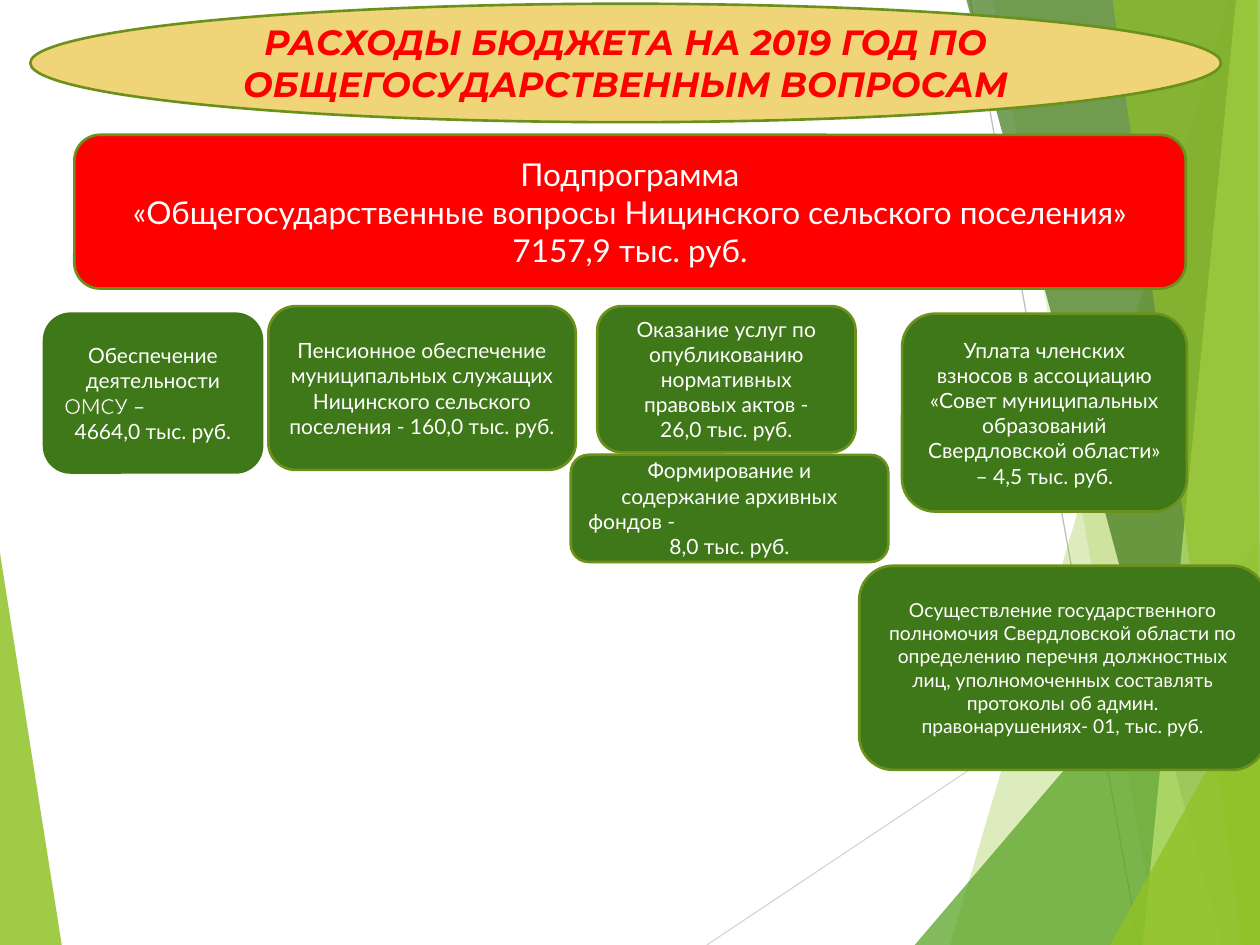
from dataclasses import dataclass

from lxml.etree import SubElement
from pptx import Presentation
from pptx.dml.color import RGBColor as Rgb
from pptx.enum.shapes import MSO_CONNECTOR as Link
from pptx.enum.shapes import MSO_SHAPE as Kind
from pptx.enum.text import MSO_ANCHOR as Anchor
from pptx.enum.text import PP_ALIGN as Align
from pptx.oxml import parse_xml
from pptx.oxml.ns import nsdecls, qn
from pptx.slide import Slide
from pptx.util import Inches, Pt


@dataclass(frozen=True)
class Theme:
    white: str = "FFFFFF"
    red: str = "FF0000"
    sand: str = "F0D578"
    dark: str = "3F7819"
    green: str = "54A021"
    lime: str = "90C226"
    pale: str = "C0E474"
    edge: str = "6B901C"
    body: str = "Lato"
    head: str = "Montserrat"
    title: int = 20
    large: int = 18
    text: int = 12
    small: int = 11
    border: float = 1.5
    thin: float = 0.75


THEME = Theme()


@dataclass(frozen=True)
class Wedge:
    points: tuple[tuple[float, float], ...]
    fill: str
    alpha: int


@dataclass(frozen=True)
class Ray:
    start: tuple[float, float]
    end: tuple[float, float]
    color: str


@dataclass(frozen=True)
class Para:
    text: str
    align: Align = Align.CENTER
    ring: str = ""


@dataclass(frozen=True)
class Box:
    place: tuple[float, float, float, float]
    paras: tuple[Para, ...]
    size: int = THEME.text
    fill: str = THEME.dark
    edge: str = THEME.edge
    kind: Kind = Kind.ROUNDED_RECTANGLE
    color: str = THEME.white
    font: str = THEME.body
    strong: bool = False


LEFT = Wedge(((0, 4.39), (0.49, 7.5), (0, 7.5)), THEME.lime, 85)
RAYS = (
    Ray((5.61, 7.5), (10, 4.57), "D9D9D9"),
    Ray((7.7, 0), (9.04, 7.5), "BFBFBF"),
)
WEDGES = (
    Wedge(((9.75, 0), (7.54, 7.5), (10, 7.5), (10, 0)), THEME.lime, 30),
    Wedge(((7.88, 0), (9.19, 7.5), (10, 7.5), (10, 0)), THEME.lime, 20),
    Wedge(((7.26, 7.5), (10, 4.29), (10, 7.5)), THEME.green, 72),
    Wedge(((7.67, 0), (9.7, 7.5), (10, 7.5), (10, 0)), THEME.dark, 70),
    Wedge(((9.81, 0), (9.07, 7.5), (10, 7.5), (10, 0)), THEME.pale, 70),
    Wedge(((8.83, 0), (9.86, 7.5), (10, 7.5), (9.98, 0)), THEME.lime, 65),
    Wedge(((8.81, 7.5), (10, 5.35), (10, 7.5)), THEME.lime, 80),
)
BOXES = (
    Box((0.24, 0.03, 9.45, 0.94),
        (Para("РАСХОДЫ БЮДЖЕТА НА 2019 ГОД ПО ОБЩЕГОСУДАРСТВЕННЫМ ВОПРОСАМ"),),
        size=THEME.title, fill=THEME.sand, kind=Kind.OVAL,
        color=THEME.red, font=THEME.head, strong=True),
    Box((0.59, 1.07, 8.82, 1.22),
        (Para("Подпрограмма"),
         Para("«Общегосударственные вопросы Ницинского сельского поселения»"),
         Para("7157,9 тыс. руб.")),
        size=THEME.large, fill=THEME.red),
    Box((0.35, 2.49, 1.73, 1.26),
        (Para("Обеспечение деятельности"),
         Para(" –", Align.LEFT, "ОМСУ"),
         Para("4664,0 тыс. руб.")),
        edge=THEME.dark),
    Box((2.13, 2.43, 2.44, 1.3),
        (Para("Пенсионное обеспечение муниципальных служащих Ницинского "
              "сельского поселения - 160,0 тыс. руб."),)),
    Box((4.74, 2.43, 2.05, 1.16),
        (Para("Оказание услуг по опубликованию нормативных правовых актов -"),
         Para("26,0 тыс. руб."))),
    Box((7.16, 2.49, 2.26, 1.57),
        (Para("Уплата членских взносов в ассоциацию «Совет муниципальных "
              "образований Свердловской области» – 4,5 тыс. руб."),)),
    Box((4.53, 3.61, 2.52, 0.85),
        (Para("Формирование и содержание архивных"),
         Para("фондов -", Align.LEFT),
         Para("8,0 тыс. руб."))),
    Box((6.82, 4.49, 3.23, 1.62),
        (Para("Осуществление государственного полномочия Свердловской области "
              "по определению перечня должностных лиц, уполномоченных составлять "
              "протоколы об админ. правонарушениях- 01, тыс. руб."),),
        size=THEME.small),
)


def paint(fill, color: str) -> None:
    """Give a fill one solid colour."""
    fill.solid()
    fill.fore_color.rgb = Rgb.from_string(color)


def draw_wedge(slide: Slide, wedge: Wedge) -> None:
    """Draw a see-through polygon."""
    spots = [(Inches(x), Inches(y)) for x, y in wedge.points]
    pen = slide.shapes.build_freeform(*spots[0])
    pen.add_line_segments(spots[1:], close=True)
    shape = pen.convert_to_shape()
    shape.shadow.inherit = False
    paint(shape.fill, wedge.fill)
    shape.line.fill.background()
    tone = shape.fill._xPr.find(qn("a:solidFill"))[0]
    SubElement(tone, qn("a:alpha"), val=str(wedge.alpha * 1000))


def draw_ray(slide: Slide, ray: Ray) -> None:
    """Draw a thin straight line."""
    ends = [Inches(n) for n in (*ray.start, *ray.end)]
    line = slide.shapes.add_connector(Link.STRAIGHT, *ends)
    line.line.width = Pt(THEME.thin)
    paint(line.line.fill, ray.color)
    SubElement(line._element.spPr, qn("a:effectLst"))


def add_run(para, text: str, box: Box):
    """Add a run of text in the style of its box."""
    run = para.add_run()
    run.text = text
    form = {"name": box.font, "size": Pt(box.size),
            "bold": box.strong, "italic": box.strong}
    for key, value in form.items():
        setattr(run.font, key, value)
    run.font.color.rgb = Rgb.from_string(box.color)
    return run


def add_ring(run) -> None:
    """Outline the letters of a run."""
    run.font._element.insert(0, parse_xml(
        f'<a:ln {nsdecls("a")} w="{Pt(THEME.thin)}"><a:solidFill>'
        f'<a:srgbClr val="{THEME.dark}"/></a:solidFill></a:ln>'))


def draw_box(slide: Slide, box: Box) -> None:
    """Draw a filled shape with its paragraphs."""
    shape = slide.shapes.add_shape(box.kind, *map(Inches, box.place))
    shape.shadow.inherit = False
    paint(shape.fill, box.fill)
    paint(shape.line.fill, box.edge)
    shape.line.width = Pt(THEME.border)
    frame = shape.text_frame
    for key, value in {"word_wrap": True, "vertical_anchor": Anchor.MIDDLE}.items():
        setattr(frame, key, value)
    for index, item in enumerate(box.paras):
        para = frame.add_paragraph() if index else frame.paragraphs[0]
        para.alignment = item.align
        if item.ring:
            add_ring(add_run(para, item.ring, box))
        add_run(para, item.text, box)


def main() -> None:
    """Build the budget slide and save it."""
    deck = Presentation()
    deck.slide_width, deck.slide_height = Inches(10), Inches(7.5)
    slide = deck.slides.add_slide(deck.slide_layouts[6])
    draw_wedge(slide, LEFT)
    for ray in RAYS:
        draw_ray(slide, ray)
    for wedge in WEDGES:
        draw_wedge(slide, wedge)
    for box in BOXES:
        draw_box(slide, box)
    deck.save("out.pptx")


if __name__ == "__main__":
    main()
